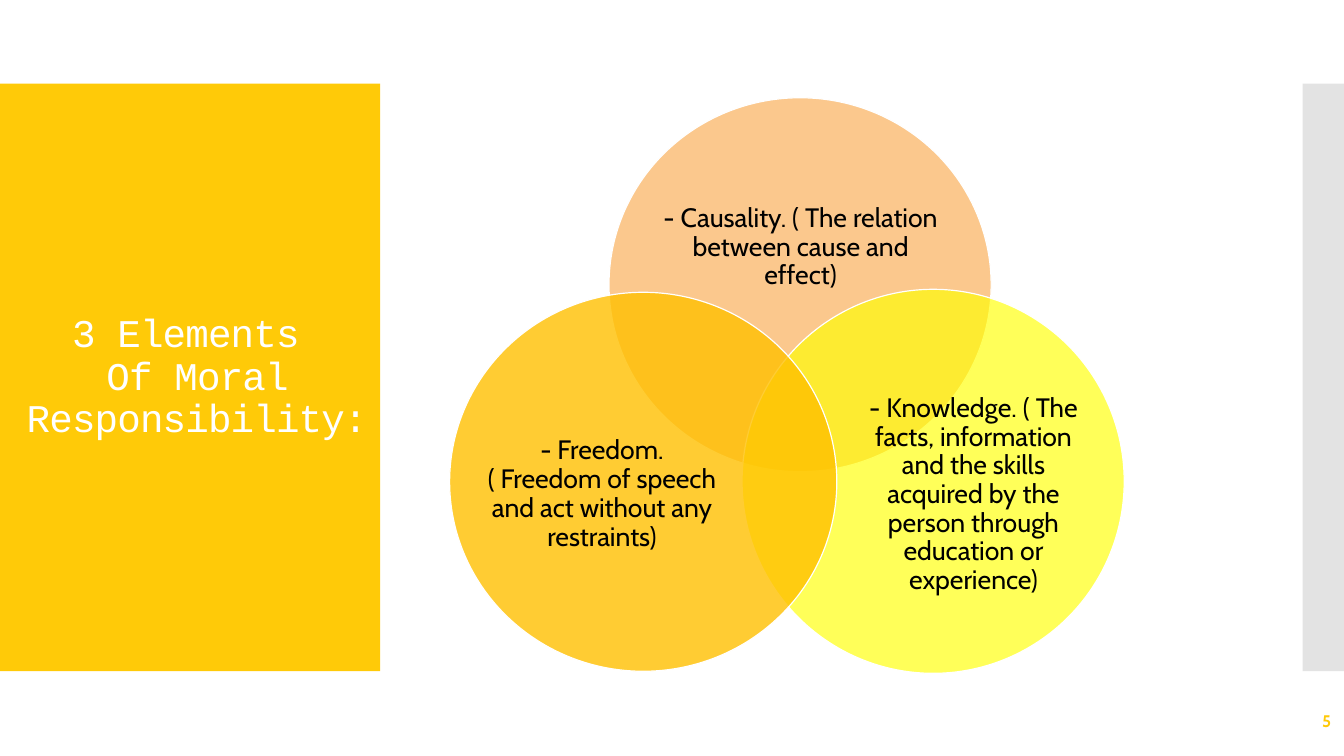
import pptx
import pptx.util
import pptx.dml.color
import pptx.enum.shapes
import pptx.enum.text
from lxml import etree

Inches = pptx.util.Inches
Align = pptx.enum.text.PP_ALIGN
Kind = pptx.enum.shapes.MSO_SHAPE

COLORS = {
    "gold": "FFCA08",
    "gray": "C8C8C8",
    "orange": "F8931D",
    "yellow": "FFFF00",
    "amber": "FFC000",
    "white": "FFFFFF",
    "black": "000000",
}

presentation = pptx.Presentation()
presentation.slide_width = Inches(13.33)
presentation.slide_height = Inches(7.5)
slide = presentation.slides.add_slide(presentation.slide_layouts[6])


def add_filled(kind, box, color, opacity=100):
    """Add a borderless shape whose opacity is given in percent."""
    shape = slide.shapes.add_shape(kind, *map(Inches, box))
    shape.shadow.inherit = False
    shape.fill.solid()
    shape.fill.fore_color.rgb = pptx.dml.color.RGBColor.from_string(COLORS[color])
    shape.line.fill.background()
    if opacity < 100:
        color_element = shape.fill._xPr.find(".//" + pptx.oxml.ns.qn("a:srgbClr"))
        alpha = etree.SubElement(color_element, pptx.oxml.ns.qn("a:alpha"))
        alpha.set("val", str(opacity * 1000))
    return shape


def add_label(box, text, size, color, font="Cabin", align=Align.CENTER, spacing=0.9, margin=0):
    """Add a wrapped, vertically centred text box and return its text frame."""
    frame = slide.shapes.add_textbox(*map(Inches, box)).text_frame
    frame.word_wrap = True
    frame.vertical_anchor = pptx.enum.text.MSO_ANCHOR.MIDDLE
    frame.margin_left = frame.margin_right = Inches(margin)
    frame.margin_top = frame.margin_bottom = Inches(margin / 2)
    paragraph = frame.paragraphs[0]
    paragraph.text = text
    paragraph.alignment = align
    paragraph.line_spacing = spacing
    for run in paragraph.runs:
        run.font.size = pptx.util.Pt(size)
        run.font.name = font
        run.font.color.rgb = pptx.dml.color.RGBColor.from_string(COLORS[color])
    return frame


# Side panels and title
add_filled(Kind.RECTANGLE, (0, 0.83, 3.77, 5.83), "gold")
add_filled(Kind.RECTANGLE, (12.92, 0.83, 0.41, 5.83), "gray", 50)
title = add_label((0.11, 1.23, 3.69, 5.03), "3 Elements \vOf Moral Responsibility:",
                  28, "white", font="Courier New", margin=0.1)
for run in title.paragraphs[0].runs:
    run.font._element.set("spc", "-60")

# Overlapping circles: circle box, colour, opacity, text box, text
elements = [
    ((6.04, 0.97, 3.79, 3.71), "orange", 50, (6.55, 1.62, 2.78, 1.67),
     "- Causality. ( The relation between cause and effect)"),
    ((7.36, 2.87, 3.79, 3.81), "yellow", 65, (8.52, 3.86, 2.27, 2.1),
     "- Knowledge. ( The facts, information and the skills acquired "
     "by the person through education or experience)"),
    ((4.46, 2.9, 3.84, 3.76), "amber", 80, (4.82, 3.87, 2.3, 2.07),
     "- Freedom. ( Freedom of speech and act without any restraints)"),
]
for circle_box, color, opacity, text_box, text in elements:
    circle = add_filled(Kind.OVAL, circle_box, color, opacity)
    circle.line.color.rgb = pptx.dml.color.RGBColor.from_string(COLORS["white"])
    circle.line.width = pptx.util.Pt(0.85)
    add_label(text_box, text, 19, "black")

# Slide number
number = add_label((11.63, 6.95, 1.67, 0.4), "5", 12, "gold",
                   align=Align.RIGHT, spacing=1.0, margin=0.1)
number.paragraphs[0].runs[0].font.bold = True

presentation.save("out.pptx")
